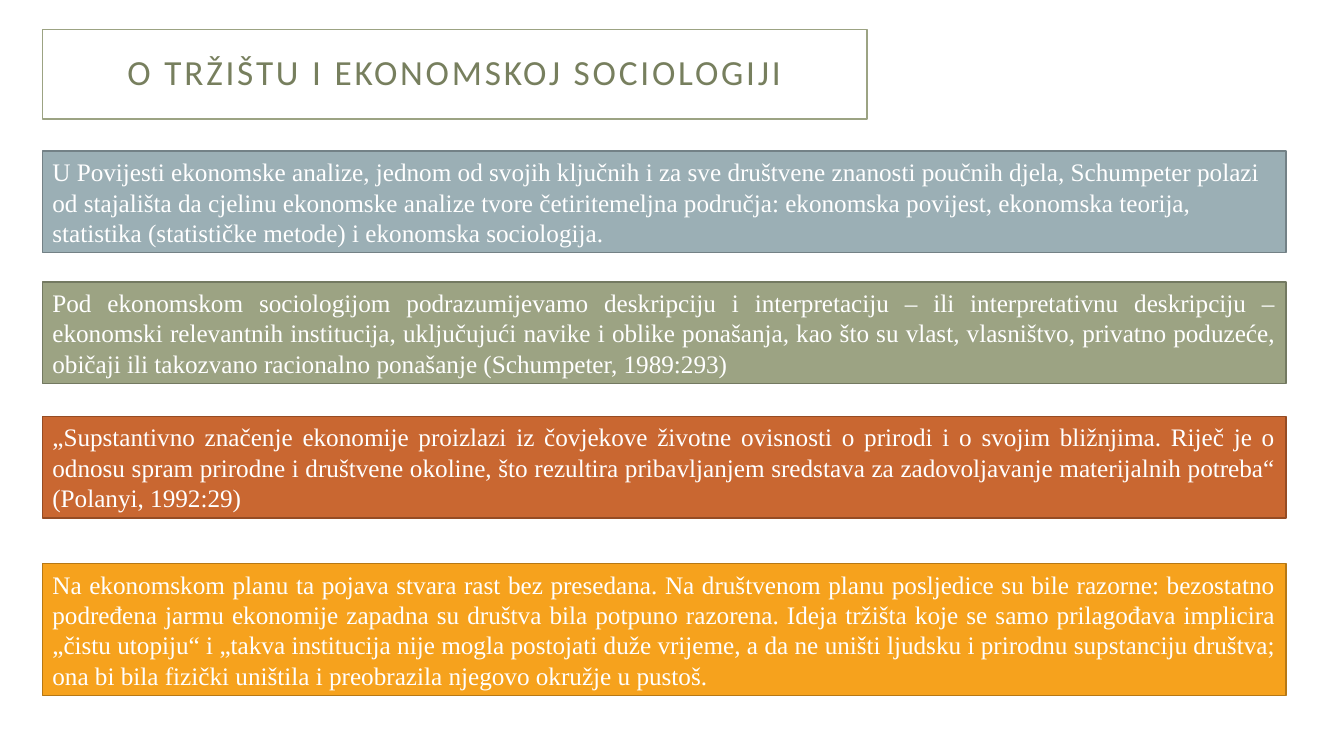
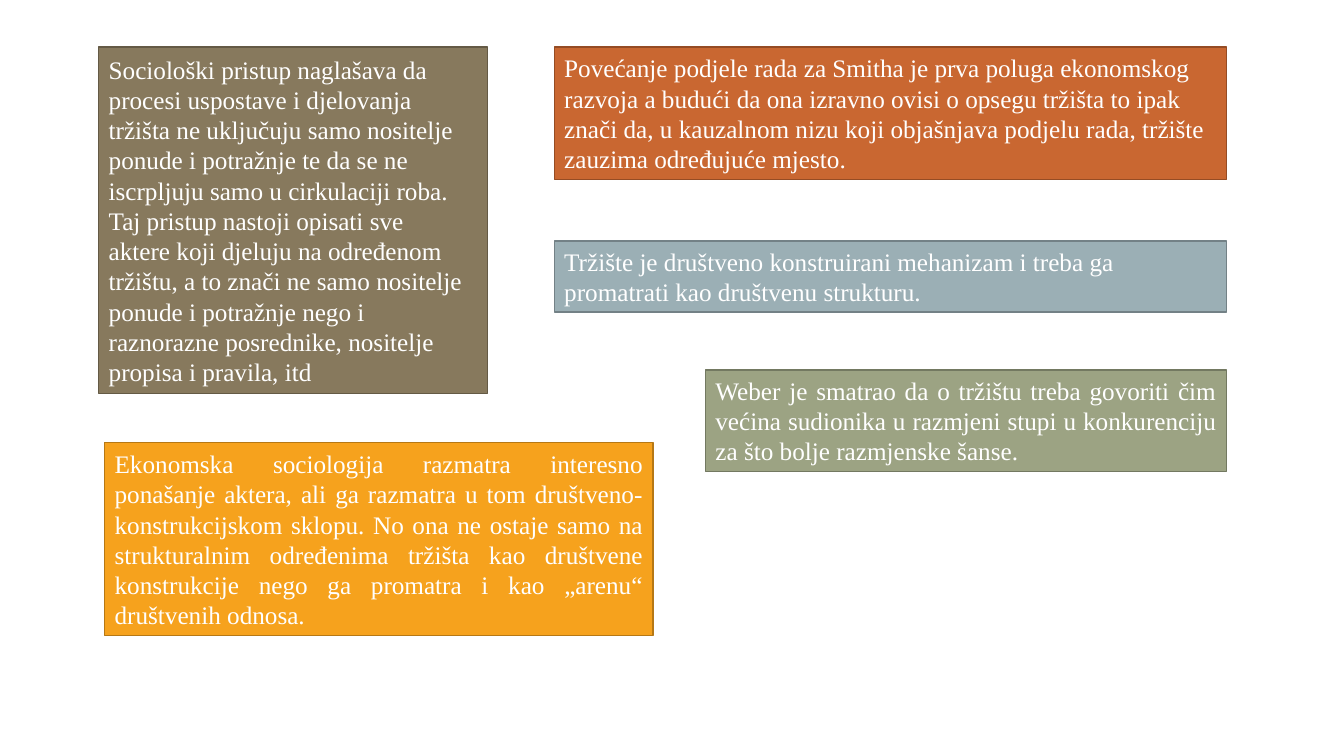
from dataclasses import dataclass

from pptx import Presentation
from pptx import util as u
from pptx.dml.color import RGBColor
from pptx.enum import shapes, text

# Content: (colour, alignment, left, top, width, line count, text), lengths in cm
LEFT, JUST = text.PP_ALIGN.LEFT, text.PP_ALIGN.JUSTIFY
MARGIN, FULL = 1.07, 31.34
COLUMN, COLUMN_W = 13.97, 16.94

SLIDES = [
    ("O TRŽIŠTU I EKONOMSKOJ SOCIOLOGIJI", [
        ("blue", LEFT, MARGIN, 3.81, FULL, 3,
         "U Povijesti ekonomske analize, jednom od svojih ključnih i za sve društvene "
         "znanosti poučnih djela, Schumpeter polazi od stajališta da cjelinu ekonomske "
         "analize tvore četiritemeljna područja: ekonomska povijest, ekonomska teorija, "
         "statistika (statističke metode) i ekonomska sociologija."),
        ("green", JUST, MARGIN, 7.11, FULL, 3,
         "Pod ekonomskom sociologijom podrazumijevamo deskripciju i interpretaciju – ili "
         "interpretativnu deskripciju – ekonomski relevantnih institucija, uključujući "
         "navike i oblike ponašanja, kao što su vlast, vlasništvo, privatno poduzeće, "
         "običaji ili takozvano racionalno ponašanje (Schumpeter, 1989:293)"),
        ("rust", JUST, MARGIN, 10.49, FULL, 3,
         "„Supstantivno značenje ekonomije proizlazi iz čovjekove životne ovisnosti o "
         "prirodi i o svojim bližnjima. Riječ je o odnosu spram prirodne i društvene "
         "okoline, što rezultira pribavljanjem sredstava za zadovoljavanje materijalnih "
         "potreba“ (Polanyi, 1992:29)"),
        ("amber", JUST, MARGIN, 14.2, FULL, 4,
         "Na ekonomskom planu ta pojava stvara rast bez presedana. Na društvenom planu "
         "posljedice su bile razorne: bezostatno podređena jarmu ekonomije zapadna su "
         "društva bila potpuno razorena. Ideja tržišta koje se samo prilagođava implicira "
         "„čistu utopiju“ i „takva institucija nije mogla postojati duže vrijeme, a da ne "
         "uništi ljudsku i prirodnu supstanciju društva; ona bi bila fizički uništila i "
         "preobrazila njegovo okružje u pustoš."),
    ]),
    (None, [
        ("blue", LEFT, COLUMN, 6.07, COLUMN_W, 2,
         "Tržište je društveno konstruirani mehanizam i treba ga promatrati kao "
         "društvenu strukturu."),
        ("amber", JUST, 2.64, 11.15, 13.82, 6,
         "Ekonomska sociologija razmatra interesno ponašanje aktera, ali ga razmatra u "
         "tom društveno-konstrukcijskom sklopu. No ona ne ostaje samo na strukturalnim "
         "određenima tržišta kao društvene konstrukcije nego ga promatra i kao „arenu“ "
         "društvenih odnosa."),
        ("rust", LEFT, COLUMN, 1.19, COLUMN_W, 4,
         "Povećanje podjele rada za Smitha je prva poluga ekonomskog razvoja a budući da "
         "ona izravno ovisi o opsegu tržišta to ipak znači da, u kauzalnom nizu koji "
         "objašnjava podjelu rada, tržište zauzima određujuće mjesto."),
        ("green", JUST, 17.78, 9.32, 13.13, 3,
         "Weber je smatrao da o tržištu treba govoriti čim većina sudionika u razmjeni "
         "stupi u konkurenciju za što bolje razmjenske šanse."),
        ("brown", LEFT, 2.49, 1.19, 9.8, 11,
         "Sociološki pristup naglašava da procesi uspostave i djelovanja tržišta ne "
         "uključuju samo nositelje ponude i potražnje te da se ne iscrpljuju samo u "
         "cirkulaciji roba. Taj pristup nastoji opisati sve\v"
         "aktere koji djeluju na određenom tržištu, a to znači ne samo nositelje ponude i "
         "potražnje nego i raznorazne posrednike, nositelje propisa i pravila, itd"),
    ]),
]


@dataclass(frozen=True)
class Theme:
    white: str = "FFFFFF"
    title: str = "777F5E"
    title_line: str = "9CA383"
    title_font: str = "Calibri"
    title_size: float = 25.2
    title_spacing: int = 200  # hundredths of a point
    body_font: str = "Times New Roman"
    body_size: float = 18
    line_width: float = 1
    line_height: float = 0.77  # cm per text line
    padding: float = 0.25  # cm, top and bottom insets together


THEME = Theme()
PANEL_COLOURS = {  # fill, outline
    "blue": ("9BAFB5", "738186"),
    "green": ("9CA383", "737961"),
    "rust": ("C96731", "954C24"),
    "amber": ("F6A21D", "B67815"),
    "brown": ("87795D", "645A45"),
}


def paint(sp, fill, line):
    sp.fill.solid()
    sp.fill.fore_color.rgb = RGBColor.from_string(fill)
    sp.line.color.rgb = RGBColor.from_string(line)
    sp.line.width = u.Pt(THEME.line_width)


def write(sp, content, align, font, size, colour):
    tf = sp.text_frame
    tf.word_wrap = True
    tf.vertical_anchor = text.MSO_ANCHOR.MIDDLE
    tf.text = content
    p = tf.paragraphs[0]
    p.alignment = align
    for r in p.runs:
        r.font.name = font
        r.font.size = u.Pt(size)
        r.font.color.rgb = RGBColor.from_string(colour)
    return tf


def add_title(s, content):
    sp = s.shapes.title
    sp.left, sp.top, sp.width, sp.height = map(u.Cm, (MARGIN, 0.74, 20.78, 2.26))
    paint(sp, THEME.white, THEME.title_line)
    tf = write(sp, content, text.PP_ALIGN.CENTER, THEME.title_font,
               THEME.title_size, THEME.title)
    tf.auto_size = text.MSO_AUTO_SIZE.NONE
    tf.margin_left = tf.margin_right = tf.margin_top = tf.margin_bottom = u.Cm(0.51)
    p = tf.paragraphs[0]
    p.line_spacing = 0.9
    for r in p.runs:
        r.font._element.set("spc", str(THEME.title_spacing))


def add_panel(s, colour, align, left, top, width, lines, content):
    height = lines * THEME.line_height + THEME.padding
    sp = s.shapes.add_shape(shapes.MSO_SHAPE.RECTANGLE,
                            *map(u.Cm, (left, top, width, height)))
    sp.shadow.inherit = False
    paint(sp, *PANEL_COLOURS[colour])
    tf = write(sp, content, align, THEME.body_font, THEME.body_size, THEME.white)
    tf.auto_size = text.MSO_AUTO_SIZE.SHAPE_TO_FIT_TEXT


def main():
    prs = Presentation()
    prs.slide_width, prs.slide_height = u.Cm(33.87), u.Cm(19.05)
    title_only, blank = prs.slide_layouts[5], prs.slide_layouts[6]
    for title, panels in SLIDES:
        s = prs.slides.add_slide(title_only if title else blank)
        if title:
            add_title(s, title)
        for panel in panels:
            add_panel(s, *panel)
    prs.save("out.pptx")


if __name__ == "__main__":
    main()
